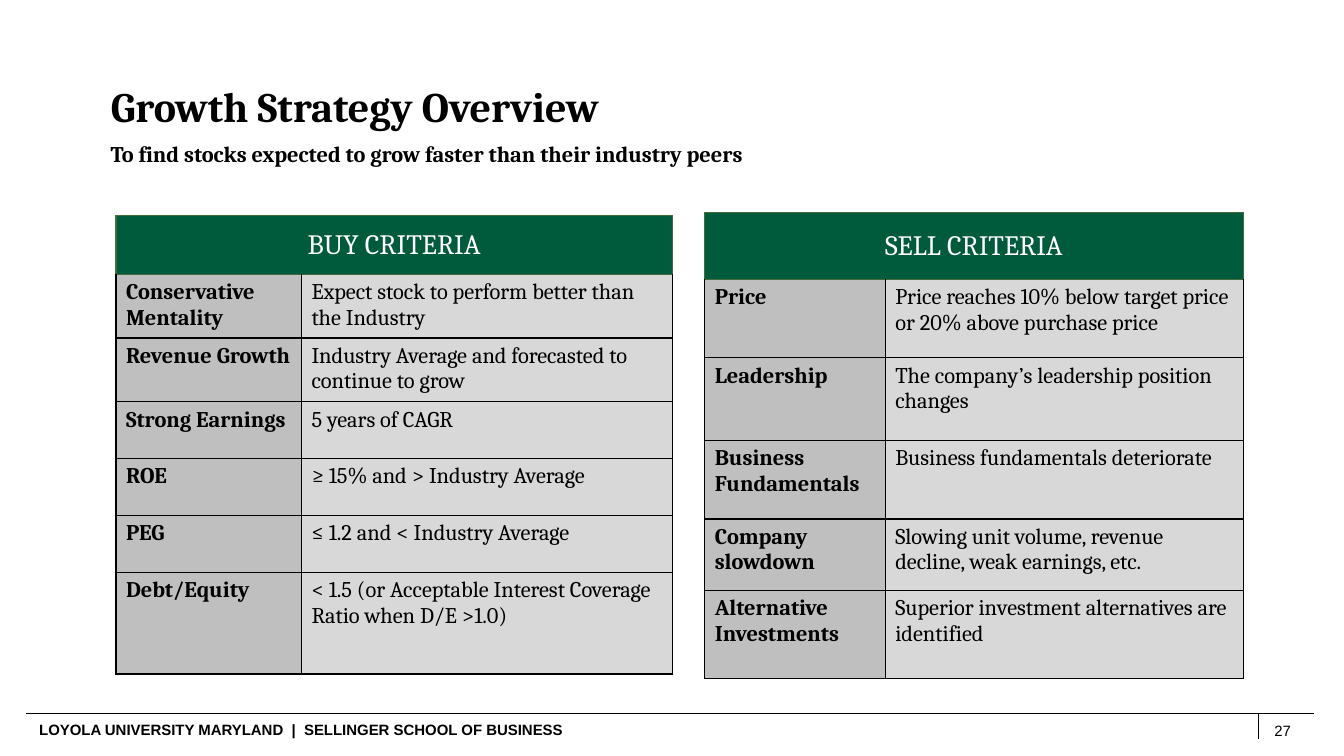
from dataclasses import dataclass

from lxml.etree import SubElement
from pptx import Presentation
from pptx.dml.color import RGBColor
from pptx.enum.shapes import MSO_CONNECTOR
from pptx.enum.text import MSO_ANCHOR, PP_ALIGN
from pptx.oxml.ns import qn
from pptx.util import Inches, Pt

COLORS = {
    "ink": "000000",
    "white": "FFFFFF",
    "header": "005A3C",
    "header_edge": "436C3C",
    "label": "BFBFBF",
    "detail": "D8D8D8",
}
SERIF, SANS = "Cambria", "Arial"


@dataclass
class Label:
    text: str
    left: float
    top: float
    width: float
    height: float
    size: float
    font: str = SERIF
    bold: bool = True


@dataclass
class Rule:
    start: tuple[float, float]
    end: tuple[float, float]


@dataclass
class Criteria:
    heading: str
    left: float
    top: float
    columns: tuple[float, float]
    heights: tuple[float, ...]
    rows: list[tuple[str, str]]


LABELS = [
    Label("Growth Strategy Overview", 1, 0.75, 10.89, 0.81, 30),
    Label("To find stocks expected to grow faster than their industry peers",
          1, 1.34, 8.17, 0.45, 16),
    Label("LOYOLA UNIVERSITY MARYLAND  |  SELLINGER SCHOOL OF BUSINESS",
          0.29, 7.1, 5.71, 0.28, 10.7, SANS),
    Label("27", 12.54, 7.11, 0.56, 0.25, 10.7, SANS, False),
]

FOOTER_RULES = [
    Rule((0.26, 7.08), (13.03, 7.08)),
    Rule((12.48, 7.08), (12.48, 7.33)),
]

CRITERIA = [
    Criteria(
        "BUY CRITERIA", 1.15, 2.14, (1.84, 3.68),
        (0.58, 0.59, 0.59, 0.56, 0.57, 0.56, 1.01),
        [
            ("Conservative Mentality",
             "Expect stock to perform better than the Industry"),
            ("Revenue Growth",
             "Industry Average and forecasted to continue to grow"),
            ("Strong Earnings", "5 years of CAGR"),
            ("ROE", "≥ 15% and > Industry Average"),
            ("PEG", "≤ 1.2 and < Industry Average"),
            ("Debt/Equity",
             "< 1.5 (or Acceptable Interest Coverage Ratio when D/E >1.0)"),
        ],
    ),
    Criteria(
        "SELL CRITERIA", 6.99, 2.11, (1.79, 3.55),
        (0.66, 0.78, 0.82, 0.78, 0.71, 0.87),
        [
            ("Price",
             "Price reaches 10% below target price or 20% above purchase price"),
            ("Leadership", "The company’s leadership position changes"),
            ("Business Fundamentals", "Business fundamentals deteriorate"),
            ("Company slowdown",
             "Slowing unit volume, revenue decline, weak earnings, etc."),
            ("Alternative Investments",
             "Superior investment alternatives are identified"),
        ],
    ),
]


def rgb(name: str) -> RGBColor:
    return RGBColor.from_string(COLORS[name])


def style(paragraph, size: float, color: str, bold: bool, font: str = SERIF) -> None:
    paragraph.font.size = Pt(size)
    paragraph.font.name = font
    paragraph.font.bold = bold
    paragraph.font.color.rgb = rgb(color)


def draw_label(slide, label: Label) -> None:
    box = slide.shapes.add_textbox(Inches(label.left), Inches(label.top),
                                   Inches(label.width), Inches(label.height))
    box.text_frame.word_wrap = True
    paragraph = box.text_frame.paragraphs[0]
    paragraph.text = label.text
    style(paragraph, label.size, "ink", label.bold, label.font)


def draw_rule(slide, rule: Rule) -> None:
    line = slide.shapes.add_connector(MSO_CONNECTOR.STRAIGHT,
                                      *map(Inches, rule.start + rule.end))
    line.line.color.rgb = rgb("ink")
    line.line.width = Pt(0.75)
    SubElement(line._element.spPr, qn("a:effectLst"))


def set_borders(cell, color: str, top_color: str) -> None:
    properties = cell._tc.get_or_add_tcPr()
    for index, side in enumerate(("lnL", "lnR", "lnT", "lnB")):
        edge = SubElement(properties, qn(f"a:{side}"), w=str(Pt(1)))
        fill = SubElement(edge, qn("a:solidFill"))
        shade = top_color if side == "lnT" else color
        SubElement(fill, qn("a:srgbClr"), val=COLORS[shade])
        # Borders come before the fill in the cell properties
        properties.insert(index, edge)


def fill_cell(cell, text: str, size: float, color: str, bold: bool,
              background: str, edge: str, top_edge: str) -> None:
    cell.fill.solid()
    cell.fill.fore_color.rgb = rgb(background)
    set_borders(cell, edge, top_edge)
    paragraph = cell.text_frame.paragraphs[0]
    paragraph.text = text
    style(paragraph, size, color, bold)


def draw_criteria(slide, criteria: Criteria) -> None:
    table = slide.shapes.add_table(
        len(criteria.heights), 2, Inches(criteria.left), Inches(criteria.top),
        Inches(sum(criteria.columns)), Inches(sum(criteria.heights))).table
    table.horz_banding = False
    for column, width in zip(table.columns, criteria.columns):
        column.width = Inches(width)
    for row, height in zip(table.rows, criteria.heights):
        row.height = Inches(height)

    # Heading across both columns
    heading = table.cell(0, 0)
    heading.merge(table.cell(0, 1))
    for cell, text in ((heading, criteria.heading), (table.cell(0, 1), "")):
        fill_cell(cell, text, 20, "white", False,
                  "header", "header_edge", "header_edge")
    heading.vertical_anchor = MSO_ANCHOR.MIDDLE
    heading.margin_left = heading.margin_right = Inches(0.13)
    heading.margin_top = heading.margin_bottom = Inches(0.07)
    heading.text_frame.paragraphs[0].alignment = PP_ALIGN.CENTER

    # Criterion name and its detail
    for number, (name, detail) in enumerate(criteria.rows, start=1):
        top_edge = "header_edge" if number == 1 else "ink"
        fill_cell(table.cell(number, 0), name, 16, "ink", True,
                  "label", "ink", top_edge)
        fill_cell(table.cell(number, 1), detail, 16, "ink", False,
                  "detail", "ink", top_edge)


def main() -> None:
    deck = Presentation()
    deck.slide_width, deck.slide_height = Inches(13.33), Inches(7.5)
    slide = deck.slides.add_slide(deck.slide_layouts[6])
    for rule in FOOTER_RULES:
        draw_rule(slide, rule)
    for label in LABELS:
        draw_label(slide, label)
    for criteria in CRITERIA:
        draw_criteria(slide, criteria)
    deck.save("out.pptx")


if __name__ == "__main__":
    main()
